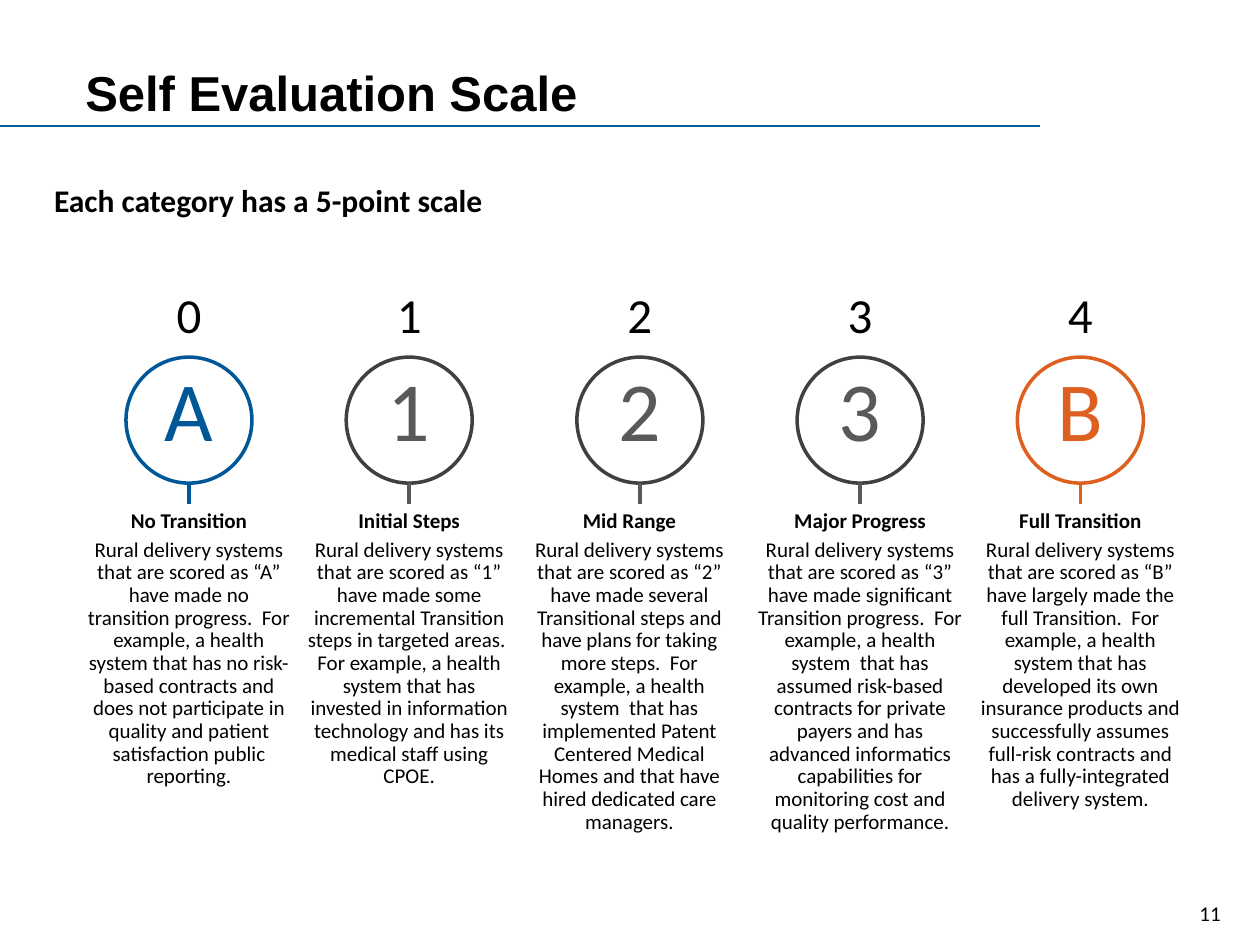
from lxml import etree
from pptx import Presentation
from pptx.dml.color import RGBColor
from pptx.enum import shapes, text
from pptx.oxml.ns import qn
from pptx.util import Cm, Pt

COLORS = {"black": "000000", "white": "FFFFFF", "rule": "005B99", "blue": "005797",
          "outline": "404040", "gray": "595959", "orange": "DE6021"}

TITLE = "Self Evaluation Scale"
SUBTITLE = "Each category has a 5-point scale"
PAGE = "11"

# score, grade, ring colour, grade colour, heading, description
LEVELS = [
    ("0", "A", "blue", "blue", "No Transition",
     "Rural delivery systems that are scored as “A” have made no transition progress.  "
     "For example, a health system that has no risk-based contracts and does not "
     "participate in quality and patient satisfaction public reporting."),
    ("1", "1", "outline", "gray", "Initial Steps",
     "Rural delivery systems that are scored as “1” have made some incremental Transition "
     "steps in targeted areas.  For example, a health system that has invested in "
     "information technology and has its medical staff using CPOE."),
    ("2", "2", "outline", "gray", "Mid Range",
     "Rural delivery systems that are scored as “2” have made several Transitional steps "
     "and have plans for taking more steps.  For example, a health system  that has "
     "implemented Patent Centered Medical Homes and that have hired dedicated care managers."),
    ("3", "3", "outline", "gray", "Major Progress",
     "Rural delivery systems that are scored as “3” have made significant Transition "
     "progress.  For example, a health system  that has assumed risk-based contracts for "
     "private payers and has advanced informatics capabilities for monitoring cost and "
     "quality performance."),
    ("4", "B", "orange", "orange", "Full Transition",
     "Rural delivery systems that are scored as “B” have largely made the full Transition.  "
     "For example, a health system that has developed its own insurance products and "
     "successfully assumes full-risk contracts and has a fully-integrated delivery system."),
]

# Column geometry, in cm
FIRST_CENTER, PITCH, NUDGE = 3.81, 4.44, 0.21
CIRCLE, SCORE_TOP, RING_TOP = 2.54, 4.87, 7.2
STEM_TOP, STEM_END = 9.74, 10.16
COLUMN_WIDTH, COLUMN_HEIGHT = 4.66, 7.2


def rgb(name):
    return RGBColor.from_string(COLORS[name])


def style(paragraph, size, color="black", bold=False, face="Calibri", align=None):
    paragraph.alignment = align
    font = paragraph.font
    font.name, font.size, font.bold = face, Pt(size), bold
    font.color.rgb = rgb(color)


def add_text(slide, left, top, width, height, lines, size, spacing=None, **look):
    """Add a text box; lines holds (text, bold) pairs, one per paragraph."""
    frame = slide.shapes.add_textbox(Cm(left), Cm(top), Cm(width), Cm(height)).text_frame
    frame.word_wrap = True
    for i, (words, bold) in enumerate(lines):
        paragraph = frame.add_paragraph() if i else frame.paragraphs[0]
        paragraph.text = words
        paragraph.line_spacing = spacing
        if i:
            paragraph.space_before = Pt(0.3 * size)
        style(paragraph, size, bold=bold, **look)
    return frame


def add_line(slide, x1, y1, x2, y2, color, width):
    line = slide.shapes.add_connector(
        shapes.MSO_CONNECTOR.STRAIGHT, Cm(x1), Cm(y1), Cm(x2), Cm(y2))
    line.line.color.rgb = rgb(color)
    line.line.width = Pt(width)
    etree.SubElement(line._element.spPr, qn("a:effectLst"))


def add_circle(slide, center, top, label, size, color, ring=None):
    circle = slide.shapes.add_shape(
        shapes.MSO_SHAPE.OVAL, Cm(center - CIRCLE / 2), Cm(top), Cm(CIRCLE), Cm(CIRCLE))
    circle.shadow.inherit = False
    if ring:
        circle.fill.solid()
        circle.fill.fore_color.rgb = rgb("white")
        circle.line.color.rgb = rgb(ring)
        circle.line.width = Pt(2)
    else:
        circle.fill.background()
        circle.line.fill.background()
    frame = circle.text_frame
    frame.vertical_anchor = text.MSO_ANCHOR.BOTTOM
    frame.text = label
    style(frame.paragraphs[0], size, color, align=text.PP_ALIGN.CENTER)


def add_level(slide, index, level):
    score, grade, ring, color, heading, description = level
    center = FIRST_CENTER + index * PITCH + (NUDGE if index >= 2 else 0)
    column_center = FIRST_CENTER + index * PITCH + (NUDGE if index >= 3 else 0)
    add_circle(slide, center, RING_TOP, grade, 48, color, ring)
    add_text(slide, column_center - COLUMN_WIDTH / 2, STEM_END, COLUMN_WIDTH, COLUMN_HEIGHT,
             [(heading, True), (description, False)], 12, 0.9, align=text.PP_ALIGN.CENTER)
    add_line(slide, center, STEM_TOP, center, STEM_END, color, 2)
    add_circle(slide, center, SCORE_TOP, score, 28, "black")


def main():
    deck = Presentation()
    deck.slide_width, deck.slide_height = Cm(25.4), Cm(19.05)
    slide = deck.slides.add_slide(deck.slide_layouts[6])
    add_text(slide, 23.93, 18.03, 1.47, 1.02, [(PAGE, False)], 12)
    add_line(slide, 0, 2.54, 20.96, 2.54, "rule", 0.75)
    title = add_text(slide, 1.47, 1.04, 18.42, 1.27, [(TITLE, True)], 28, face="Arial")
    title.margin_top = Cm(0.22)
    add_text(slide, 0.84, 3.61, 23.29, 1.07, [(SUBTITLE, True)], 18, 0.9)
    for index, level in enumerate(LEVELS):
        add_level(slide, index, level)
    deck.save("out.pptx")


if __name__ == "__main__":
    main()
